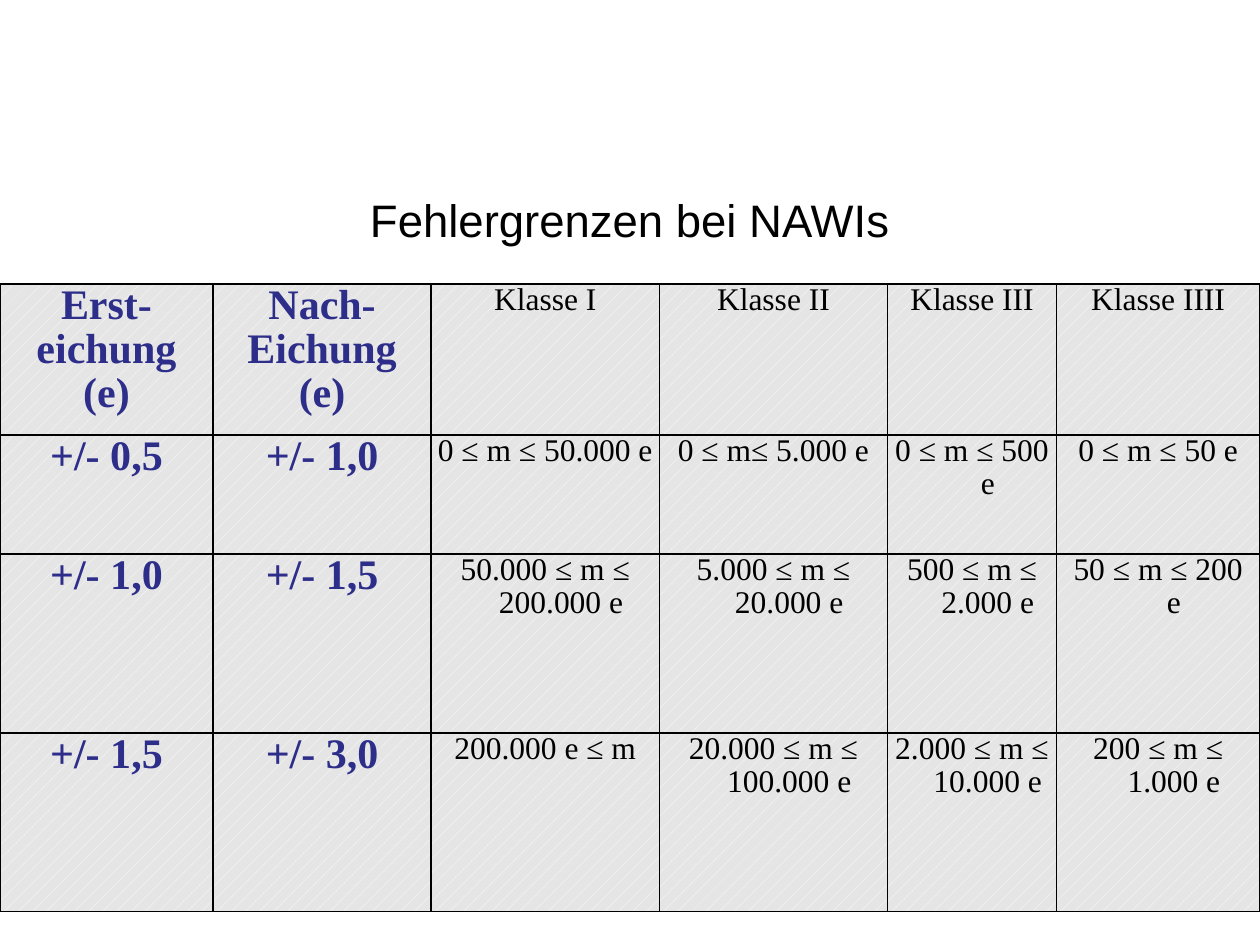
from dataclasses import dataclass

from lxml import etree
from pptx import Presentation
from pptx import util as u
from pptx.dml import color
from pptx.enum import dml, text
from pptx.oxml import ns

TITLE = "Fehlergrenzen bei NAWIs"
ROWS = [
    ["Erst-\neichung\n(e)", "Nach-\nEichung\n(e)",
     "Klasse I", "Klasse II", "Klasse III", "Klasse IIII"],
    ["+/- 0,5", "+/- 1,0",
     "0 ≤ m ≤ 50.000 e", "0 ≤ m≤ 5.000 e", "0 ≤ m ≤ 500 e", "0 ≤ m ≤ 50 e"],
    ["+/- 1,0", "+/- 1,5",
     "50.000 ≤ m ≤ 200.000 e", "5.000 ≤ m ≤ 20.000 e", "500 ≤ m ≤ 2.000 e", "50 ≤ m ≤ 200 e"],
    ["+/- 1,5", "+/- 3,0",
     "200.000 e ≤ m", "20.000 ≤ m ≤ 100.000 e", "2.000 ≤ m ≤ 10.000 e", "200 ≤ m ≤ 1.000 e"],
]
COLUMN_WIDTHS = [121.7, 124.7, 130.4, 130.4, 96.5, 116.3]
ROW_HEIGHTS = [86.4, 68, 102.2, 102.2]
LIMIT_COLUMNS = 2
SLIDE_WIDTH, SLIDE_HEIGHT = 720, 540
TITLE_TOP, TITLE_HEIGHT = 105.8, 39
TABLE_TOP = 162.2


@dataclass(frozen=True)
class Theme:
    ink: str = "000000"
    accent: str = "2D2D8A"
    cell: str = "E5E5E5"
    dots: str = "FFFFFF"
    heading_font: str = "Arial"
    table_font: str = "Times New Roman"
    title_size: float = 26
    limit_size: float = 24
    range_size: float = 18
    border: float = 1
    outer_border: float = 1.5
    hanging: float = 18
    line_spacing: float = 0.95


THEME = Theme()


def rgb(value):
    return color.RGBColor.from_string(value)


def write(frame, words, *, font, size, ink, bold=False, hanging=0, spacing=1.0):
    frame.word_wrap = True
    for index, line in enumerate(words.split("\n")):
        para = frame.add_paragraph() if index else frame.paragraphs[0]
        para.alignment = text.PP_ALIGN.CENTER
        para.line_spacing = spacing
        para.space_before = u.Pt(0)
        if hanging:
            properties = para._p.get_or_add_pPr()
            properties.set("marL", str(u.Pt(hanging)))
            properties.set("indent", str(-u.Pt(hanging)))
        span = para.add_run()
        span.text = line
        span.font.name = font
        span.font.size = u.Pt(size)
        span.font.bold = bold
        span.font.color.rgb = rgb(ink)


def add_borders(cell, widths):
    properties = cell._tc.get_or_add_tcPr()
    for side, width in widths.items():
        line = etree.SubElement(properties, ns.qn(f"a:ln{side}"), w=str(u.Pt(width)))
        fill = etree.SubElement(line, ns.qn("a:solidFill"))
        etree.SubElement(fill, ns.qn("a:srgbClr"), val=THEME.ink)


def format_cell(cell, is_last):
    cell.margin_left = cell.margin_right = u.Pt(3.6)
    cell.margin_top = cell.margin_bottom = u.Pt(0)
    cell.vertical_anchor = text.MSO_ANCHOR.TOP
    widths = dict.fromkeys("LRTB", THEME.border)
    if is_last:
        widths["R"] = THEME.outer_border
    add_borders(cell, widths)
    cell.fill.patterned()
    cell.fill.pattern = dml.MSO_PATTERN.PERCENT_10
    cell.fill.fore_color.rgb = rgb(THEME.dots)
    cell.fill.back_color.rgb = rgb(THEME.cell)


def add_title(page):
    box = page.shapes.title
    box.left, box.top = u.Pt(0), u.Pt(TITLE_TOP)
    box.width, box.height = u.Pt(SLIDE_WIDTH), u.Pt(TITLE_HEIGHT)
    frame = box.text_frame
    frame.auto_size = text.MSO_AUTO_SIZE.SHAPE_TO_FIT_TEXT
    frame.vertical_anchor = text.MSO_ANCHOR.MIDDLE
    write(frame, TITLE, font=THEME.heading_font, size=THEME.title_size, ink=THEME.ink)


def add_limits_table(page):
    table = page.shapes.add_table(
        len(ROWS), len(COLUMN_WIDTHS), u.Pt(0), u.Pt(TABLE_TOP),
        u.Pt(sum(COLUMN_WIDTHS)), u.Pt(sum(ROW_HEIGHTS))).table
    table.first_row = table.horz_banding = False
    for column, width in zip(table.columns, COLUMN_WIDTHS):
        column.width = u.Pt(width)
    for row, height, entries in zip(table.rows, ROW_HEIGHTS, ROWS):
        row.height = u.Pt(height)
        for index, (cell, words) in enumerate(zip(row.cells, entries)):
            is_limit = index < LIMIT_COLUMNS
            format_cell(cell, index == len(entries) - 1)
            write(cell.text_frame, words, font=THEME.table_font,
                  size=THEME.limit_size if is_limit else THEME.range_size,
                  ink=THEME.accent if is_limit else THEME.ink,
                  bold=is_limit, hanging=THEME.hanging, spacing=THEME.line_spacing)


def main():
    deck = Presentation()
    deck.slide_width, deck.slide_height = u.Pt(SLIDE_WIDTH), u.Pt(SLIDE_HEIGHT)
    page = deck.slides.add_slide(deck.slide_layouts.get_by_name("Title Only"))
    add_title(page)
    add_limits_table(page)
    deck.save("out.pptx")


if __name__ == "__main__":
    main()
